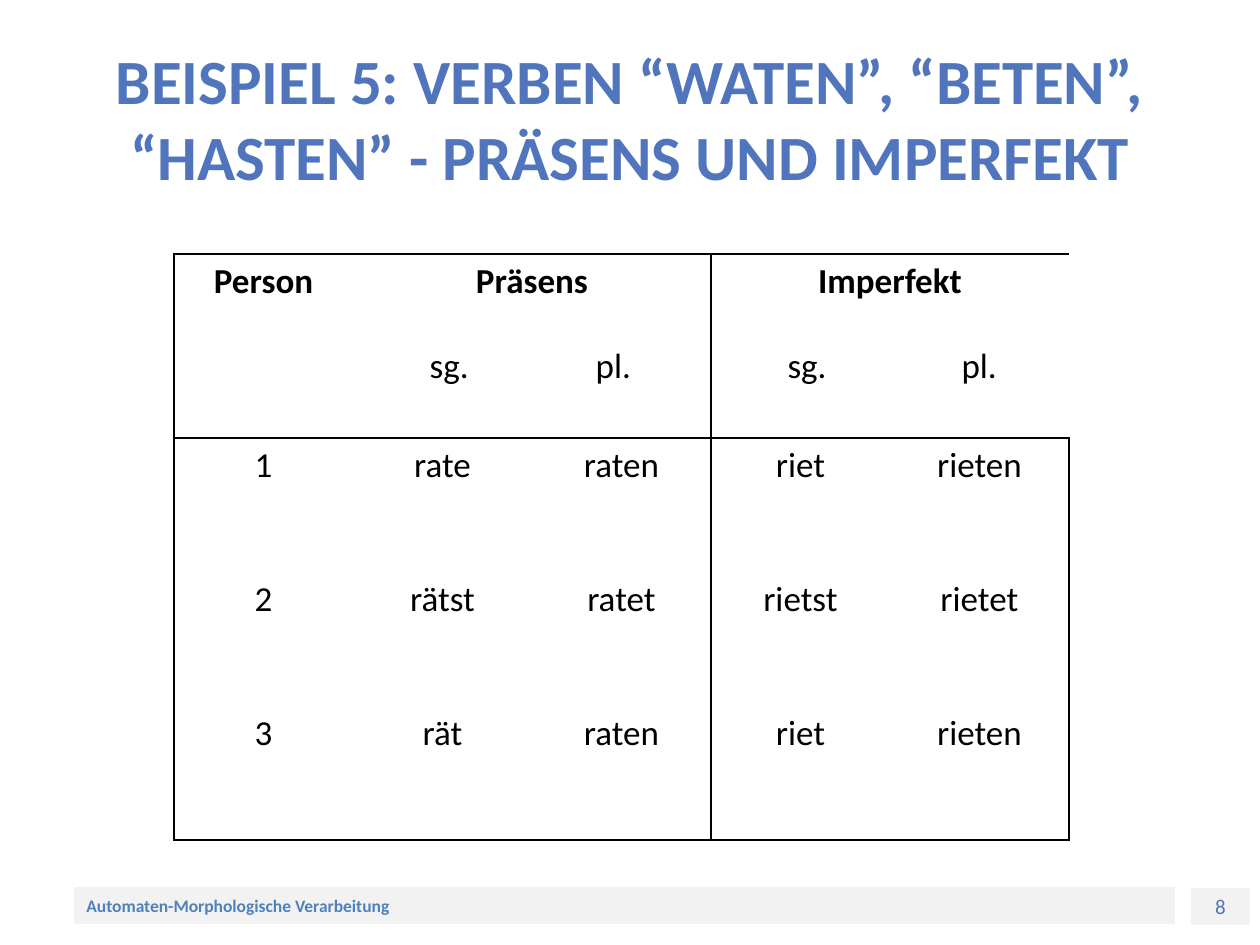
"""Build the slide with the table of German verb forms."""
from dataclasses import dataclass

from lxml.etree import SubElement
from pptx import Presentation
from pptx.dml.color import RGBColor
from pptx.enum.shapes import MSO_SHAPE
from pptx.enum.text import MSO_ANCHOR, PP_ALIGN
from pptx.oxml.ns import qn
from pptx.util import Emu, Pt


@dataclass(frozen=True)
class Theme:
    font: str = "Calibri"
    heading: str = "5075BC"
    footer: str = "4F81BD"
    band: str = "F2F2F2"
    ink: str = "000000"
    title_size: int = 36
    table_size: int = 20
    number_size: int = 12
    footer_size: int = 10
    header_gap: int = 24
    border: int = 1


@dataclass(frozen=True)
class Box:
    left: int
    top: int
    width: int
    height: int


@dataclass(frozen=True)
class Band:
    box: Box
    text: str
    size: int
    color: str
    bold: bool
    align: PP_ALIGN


@dataclass(frozen=True)
class Tense:
    name: str
    column: int
    number_tabs: tuple[int, int]


THEME = Theme()
TITLE = "BEISPIEL 5: VERBEN “WATEN”, “BETEN”, “HASTEN” - PRÄSENS UND IMPERFEKT"
TITLE_BOX = Box(63, 38, 1134, 158)
TABLE_BOX = Box(174, 254, 895, 586)
HEADER_HEIGHT = 184
BANDS = (
    Band(Box(1191, 888, 59, 37), "8", THEME.number_size, THEME.heading, False, PP_ALIGN.CENTER),
    Band(Box(74, 887, 1101, 37), "Automaten-Morphologische Verarbeitung",
         THEME.footer_size, THEME.footer, True, PP_ALIGN.LEFT),
)
TENSES = (Tense("Präsens", 1, (64, 230)), Tense("Imperfekt", 3, (64, 238)))
FORMS = (
    ("1", "rate", "raten", "riet", "rieten"),
    ("2", "rätst", "ratet", "rietst", "rietet"),
    ("3", "rät", "raten", "riet", "rieten"),
)


def px(length: int) -> Emu:
    """Turn pixels into EMU."""
    return Emu(round(length * 914400 / 126))


def place(box: Box) -> tuple[Emu, Emu, Emu, Emu]:
    """Return the box as EMU arguments."""
    return px(box.left), px(box.top), px(box.width), px(box.height)


def style(paragraph, size: int, color: str, bold: bool = False,
          align: PP_ALIGN = PP_ALIGN.CENTER) -> None:
    """Format a paragraph and its runs."""
    paragraph.alignment = align
    for run in paragraph.runs:
        run.font.name = THEME.font
        run.font.size = Pt(size)
        run.font.bold = bold
        run.font.color.rgb = RGBColor.from_string(color)


def draw_title(slide) -> None:
    """Draw the heading."""
    heading = slide.shapes.add_textbox(*place(TITLE_BOX)).text_frame
    heading.word_wrap = True
    heading.vertical_anchor = MSO_ANCHOR.MIDDLE
    heading.text = TITLE
    style(heading.paragraphs[0], THEME.title_size, THEME.heading, bold=True)


def draw_band(slide, band: Band) -> None:
    """Draw one footer band."""
    strip = slide.shapes.add_shape(MSO_SHAPE.RECTANGLE, *place(band.box))
    strip.shadow.inherit = False
    strip.fill.solid()
    strip.fill.fore_color.rgb = RGBColor.from_string(THEME.band)
    strip.line.fill.background()
    strip.text_frame.vertical_anchor = MSO_ANCHOR.MIDDLE
    strip.text_frame.text = band.text
    style(strip.text_frame.paragraphs[0], band.size, band.color, band.bold, band.align)


def set_borders(cell, row: int, column: int) -> None:
    """Rule the outer frame, the header and the line between the tenses."""
    sides = {
        "a:lnL": column in (0, 3),
        "a:lnR": column in (2, 4),
        "a:lnT": row in (0, 1),
        "a:lnB": row in (0, len(FORMS)),
    }
    properties = cell._tc.get_or_add_tcPr()
    for side, visible in sides.items():
        line = SubElement(properties, qn(side), w=str(Pt(THEME.border)))
        if visible:
            fill = SubElement(line, qn("a:solidFill"))
            SubElement(fill, qn("a:srgbClr"), val=THEME.ink)
        else:
            SubElement(line, qn("a:noFill"))
    cell.fill.background()


def fill_tense(table, tense: Tense) -> None:
    """Write a tense above its singular and plural labels."""
    header = table.cell(0, tense.column)
    header.merge(table.cell(0, tense.column + 1))
    header.text_frame.text = tense.name
    style(header.text_frame.paragraphs[0], THEME.table_size, THEME.ink, bold=True)
    numbers = header.text_frame.add_paragraph()
    numbers.text = "\tsg.\tpl."
    style(numbers, THEME.table_size, THEME.ink, align=PP_ALIGN.LEFT)
    numbers.space_before = Pt(THEME.header_gap)
    stops = SubElement(numbers._p.get_or_add_pPr(), qn("a:tabLst"))
    for position in tense.number_tabs:
        SubElement(stops, qn("a:tab"), pos=str(px(position)), algn="l")


def fill_cell(cell, text: str, bold: bool = False) -> None:
    """Write a single centred line."""
    cell.text_frame.text = text
    style(cell.text_frame.paragraphs[0], THEME.table_size, THEME.ink, bold)


def draw_table(slide) -> None:
    """Draw the conjugation table."""
    column_count = len(FORMS[0])
    table = slide.shapes.add_table(len(FORMS) + 1, column_count, *place(TABLE_BOX)).table
    table.first_row = table.horz_banding = False
    for column in table.columns:
        column.width = px(TABLE_BOX.width // column_count)
    for row in table.rows:
        row.height = px((TABLE_BOX.height - HEADER_HEIGHT) // len(FORMS))
    table.rows[0].height = px(HEADER_HEIGHT)
    for row in range(len(FORMS) + 1):
        for column in range(column_count):
            set_borders(table.cell(row, column), row, column)
    fill_cell(table.cell(0, 0), "Person", bold=True)
    for tense in TENSES:
        fill_tense(table, tense)
    for row, forms in enumerate(FORMS, start=1):
        for column, form in enumerate(forms):
            fill_cell(table.cell(row, column), form)


def main() -> None:
    """Build and save the slide."""
    presentation = Presentation()
    presentation.slide_width, presentation.slide_height = px(1260), px(945)
    slide = presentation.slides.add_slide(presentation.slide_layouts[6])
    for band in BANDS:
        draw_band(slide, band)
    draw_title(slide)
    draw_table(slide)
    presentation.save("out.pptx")


if __name__ == "__main__":
    main()
